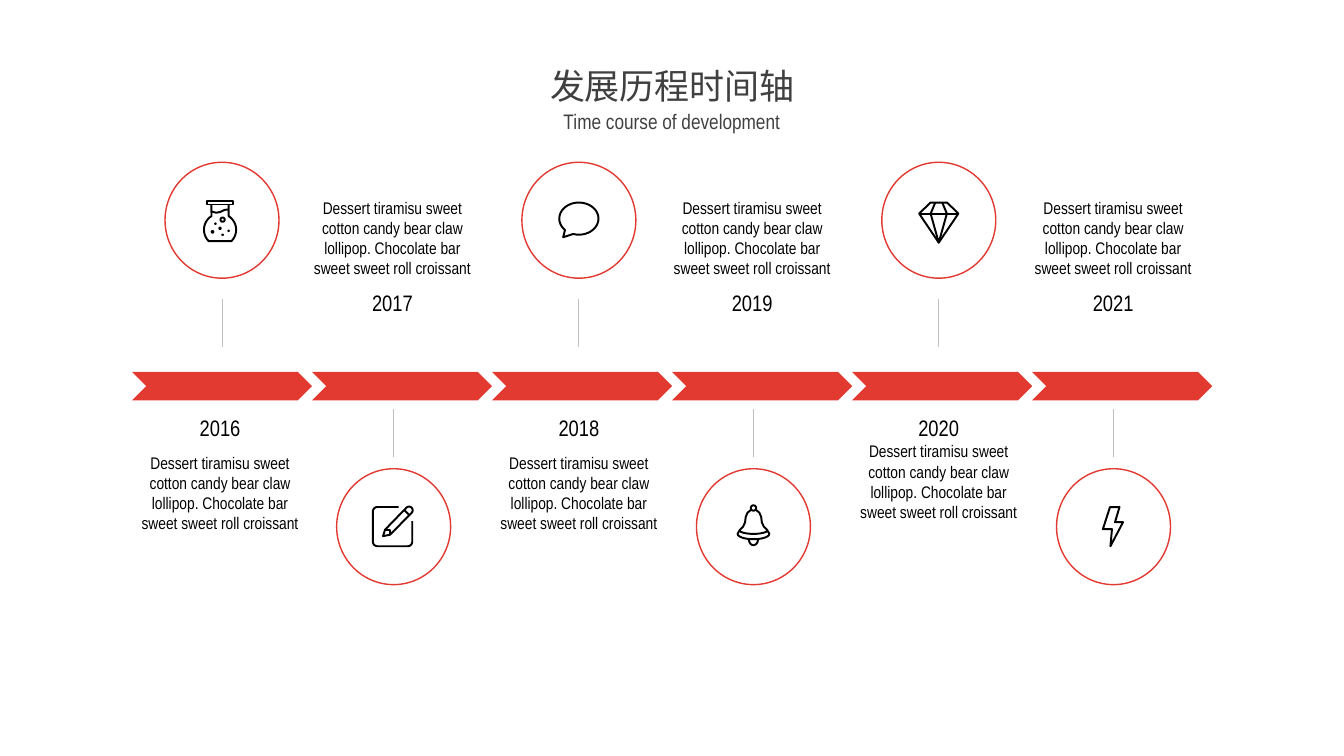
import math

import pptx
import pptx.dml.color
import pptx.enum.shapes
import pptx.enum.text
import pptx.oxml
import pptx.util

Pt = pptx.util.Pt
RGBColor = pptx.dml.color.RGBColor
MSO_SHAPE = pptx.enum.shapes.MSO_SHAPE
MSO_AUTO_SIZE = pptx.enum.text.MSO_AUTO_SIZE

RED = RGBColor(0xE2, 0x39, 0x31)
GREY = RGBColor(0xBF, 0xBF, 0xBF)
DARK = RGBColor(0x40, 0x40, 0x40)
BLACK = RGBColor(0, 0, 0)
FONT = "Arial Narrow"


def arc(cx, cy, rx, ry, start=0, end=360):
    """Points along an ellipse, angles in degrees, clockwise from the right."""
    n = max(8, abs(end - start) // 9)
    angles = [math.radians(start + (end - start) * i / n) for i in range(n + 1)]
    return [(round(cx + rx * math.cos(a), 2), round(cy + ry * math.sin(a), 2))
            for a in angles]


# Content
TITLE = "发展历程时间轴"
SUBTITLE = "Time course of development"
BODY = ("Dessert tiramisu sweet cotton candy bear claw lollipop. "
        "Chocolate bar sweet sweet roll croissant")

# Icons: strokes in points, measured from the circle's centre
FLASK = [
    [(-10.4, -14), (7.6, -14), (7.6, -11.2), (-10.4, -11.2), (-10.4, -14)],
    [(4.7, -11.2), *arc(-1.4, 6.8, 11.5, 11.5, -58, 45),
     *arc(-1.4, 6.8, 11.5, 11.5, 135, 238), (-7.6, -11.2)],
    [(-7.4, -6.2), (-4, -5.3), (-1, -6), (2, -7.4), (4.5, -7.6)],
] + [arc(x, y, r, r) for x, y, r in [
    (0.4, -0.4, 1.5), (-4.7, 2.5, 0.2), (-1.4, 5.8, 0.5),
    (-6.8, 8.3, 0.6), (4.7, 7.6, 0.2), (0.4, 10.4, 0.2)]]

PENCIL = [
    [(3.6, -14), *arc(-11.6, -10.8, 3.2, 3.2, 270, 180),
     *arc(-11.6, 10.8, 3.2, 3.2, 180, 90),
     *arc(10.1, 10.8, 3.2, 3.2, 90, 0), (13.3, -4)],
    [(-7.6, 6.8), (-6.1, 2.2), *arc(11, -11.7, 2.6, 2.6, -135, 45),
     (-2.5, 5.8), (-7.6, 6.8)],
    [(7.9, -11.5), (10.8, -8.6)],
    [(-6.1, 2.2), (-2.5, 2.2), (-2.5, 5.8)],
]

tail = arc(0, -1.1, 14, 11.5, 135, 467)
BUBBLE = [tail + [(-11.2, 12.2), tail[0]]]

dome = [(1.8, -11.9), (4.2, -10), (5.5, -7), (6, -3), (7.4, 0), (9.6, 2.2), (11.3, 5)]
BELL = [
    arc(0, -13.3, 1.9, 1.9),
    dome + arc(0, 5.2, 11.3, 3.8, 0, 180) + [(-x, y) for x, y in reversed(dome)],
    arc(0, 2.2, 10.4, 3, 10, 170),
    arc(0, 9.4, 3.2, 3.8, 0, 180),
]

DIAMOND = [
    [(-6, -12.6), (6, -12.6), (14, -4.7), (0, 16), (-14, -4.7), (-6, -12.6)],
    [(-14, -4.7), (14, -4.7)],
    [(-2.5, -12.6), (-5.8, -4.7), (0, 16), (5.8, -4.7), (2.5, -12.6)],
]

BOLT = [[(-2.5, -14), (4.3, -14), (1.1, -3.2), (6.8, -3.2), (-2.2, 14),
         (-1.1, 1.8), (-7.6, 1.8), (-2.5, -14)]]

# Year, icon, circle centre x, text left, gap between year and text
MILESTONES = [
    ("2016", FLASK, 158.6, 92.9, 8),
    ("2017", PENCIL, 281.2, 216, 8),
    ("2018", BUBBLE, 413.5, 349.2, 8),
    ("2019", BELL, 538.2, 473, 8),
    ("2020", DIAMOND, 670.6, 606.2, 0),
    ("2021", BOLT, 795.4, 730.8, 8),
]

# Layout
BAND_LEFT, BAND_TOP, BAND_H, STEP = 94.3, 265.7, 20.2, 128.6
CIRCLE_W, CIRCLE_H = 81.4, 82.8
ABOVE = {"circle": 157.3, "line": 213.8}
BELOW = {"circle": 376.2, "line": 292.3}
LINE_LEN = 33.9
TEXT_ABOVE, TEXT_BELOW = 137.5, 292.3

prs = pptx.Presentation()
prs.slide_width, prs.slide_height = Pt(960), Pt(540)
s = prs.slides.add_slide(prs.slide_layouts[5])


def set_text(sp, paragraphs, color):
    """Fill a text shape with centred (text, size, space after) paragraphs."""
    tf = sp.text_frame
    tf.word_wrap = True
    tf.vertical_anchor = pptx.enum.text.MSO_ANCHOR.TOP
    tf.auto_size = MSO_AUTO_SIZE.SHAPE_TO_FIT_TEXT
    for i, (text, size, gap) in enumerate(paragraphs):
        p = tf.paragraphs[0] if i == 0 else tf.add_paragraph()
        p.text = text
        p.alignment = pptx.enum.text.PP_ALIGN.CENTER
        p.space_before, p.space_after = Pt(0), Pt(gap)
        font = p.runs[0].font
        font.name, font.size, font.color.rgb = FONT, Pt(size), color


def add_shape(kind, x, y, w, h):
    sp = s.shapes.add_shape(kind, Pt(x), Pt(y), Pt(w), Pt(h))
    sp.shadow.inherit = False
    return sp


def outline(sp, color, width):
    sp.fill.background()
    sp.line.color.rgb, sp.line.width = color, Pt(width)


def add_icon(strokes, cx, cy):
    contours = [[(Pt(cx + x), Pt(cy + y)) for x, y in st] for st in strokes]
    builder = s.shapes.build_freeform(*contours[0][0], scale=1.0)
    for i, pts in enumerate(contours):
        if i:
            builder.move_to(*pts[0])
        builder.add_line_segments(pts[1:], close=pts[0] == pts[-1])
    sp = builder.convert_to_shape()
    sp.shadow.inherit = False
    outline(sp, BLACK, 1.4)


# Heading
title = s.shapes.title
title.left, title.top, title.width, title.height = Pt(359.3), Pt(42.5), Pt(241.9), Pt(37.4)
set_text(title, [(TITLE, 25, 0)], DARK)
subtitle = s.shapes.add_textbox(Pt(321.1), Pt(74.2), Pt(317.5), Pt(25.2))
set_text(subtitle, [(SUBTITLE, 15, 0)], DARK)

# Timeline: circles and texts swap sides at each step
for i, (year, icon, cx, text_left, gap) in enumerate(MILESTONES):
    circle_above = i % 2 == 0
    side = ABOVE if circle_above else BELOW

    chevron = add_shape(MSO_SHAPE.CHEVRON, BAND_LEFT + i * STEP, BAND_TOP, STEP, BAND_H)
    chevron.fill.solid()
    chevron.fill.fore_color.rgb = RED
    chevron.line.fill.background()

    circle = add_shape(MSO_SHAPE.OVAL, cx - CIRCLE_W / 2,
                       side["circle"] - CIRCLE_H / 2, CIRCLE_W, CIRCLE_H)
    outline(circle, RED, 1)
    add_icon(icon, cx, side["circle"])

    line = s.shapes.add_connector(pptx.enum.shapes.MSO_CONNECTOR.STRAIGHT, Pt(cx),
                                  Pt(side["line"]), Pt(cx), Pt(side["line"] + LINE_LEN))
    line.line.color.rgb, line.line.width = GREY, Pt(0.75)
    line._element.spPr.append(pptx.oxml.parse_xml(
        '<a:effectLst xmlns:a="http://schemas.openxmlformats.org/drawingml/2006/main"/>'))

    box = s.shapes.add_textbox(Pt(text_left), Pt(TEXT_BELOW if circle_above else TEXT_ABOVE),
                               Pt(STEP), Pt(85 + gap))
    if circle_above:
        set_text(box, [(year, 16, gap), (BODY, 12, 0)], BLACK)
    else:
        set_text(box, [(BODY, 12, gap), (year, 16, 0)], BLACK)

prs.save("out.pptx")
